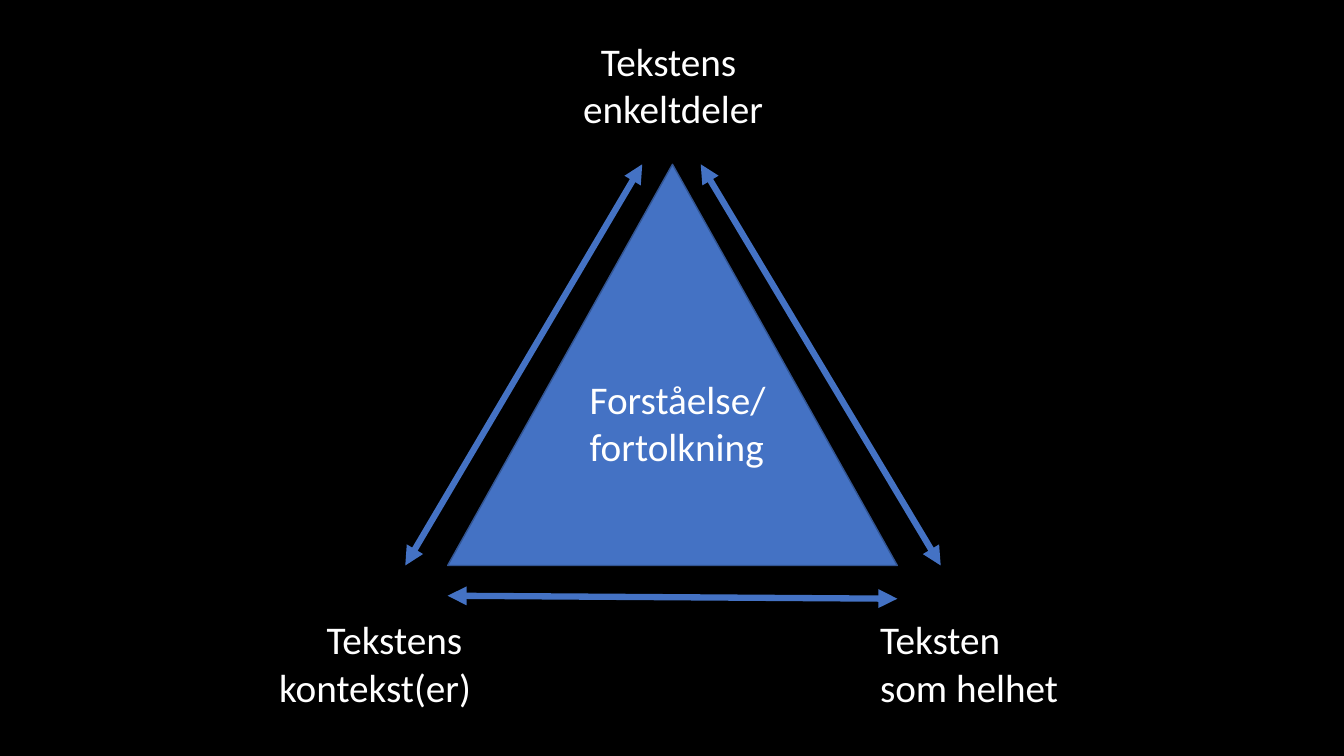
from dataclasses import dataclass

from lxml import etree
from pptx import Presentation
from pptx import util as u
from pptx.dml.color import RGBColor
from pptx.enum import shapes, text
from pptx.oxml import ns
from pptx.slide import Slide

PX = u.Inches(1) // 100
COLORS = {"background": "000000", "blue": "4472C4", "outline": "325491", "text": "FFFFFF"}
ALIGN = text.PP_ALIGN


@dataclass(frozen=True)
class Label:
    lines: tuple[str, ...]
    left: int
    top: int
    width: int
    align: text.PP_ALIGN = ALIGN.LEFT


@dataclass(frozen=True)
class Arrow:
    x1: int
    y1: int
    x2: int
    y2: int


APEX_Y, BASE_Y = 163, 561
BASE_LEFT, BASE_WIDTH = 444, 446
LABEL_HEIGHT = 104
CORNER_TOP = 606

LABELS = (
    Label(("Tekstens ", "enkeltdeler"), 560, 32, 215, ALIGN.CENTER),
    Label(("Teksten", "som helhet"), 863, CORNER_TOP, 312),
    Label(("Tekstens ", "kontekst(er)"), 260, CORNER_TOP, 217, ALIGN.RIGHT),
    Label(("Forståelse/", "fortolkning"), 575, 367, 436),
)
ARROWS = (
    Arrow(637, APEX_Y, 402, BASE_Y),
    Arrow(695, APEX_Y, 933, BASE_Y),
    Arrow(BASE_LEFT, 591, BASE_LEFT + BASE_WIDTH, 594),
)


def px(*lengths: int) -> list[u.Emu]:
    return [u.Emu(length * PX) for length in lengths]


def rgb(name: str) -> RGBColor:
    return RGBColor.from_string(COLORS[name])


def add_run(p, content: str, *, size: int = 28, font: str = "Calibri", color: str = "text") -> None:
    r = p.add_run()
    r.text = content
    r.font.size = u.Pt(size)
    r.font.name = font
    r.font.color.rgb = rgb(color)


def draw_label(s: Slide, label: Label) -> None:
    box = s.shapes.add_textbox(*px(label.left, label.top, label.width, LABEL_HEIGHT))
    tf = box.text_frame
    tf.word_wrap = True
    tf.auto_size = text.MSO_AUTO_SIZE.SHAPE_TO_FIT_TEXT
    for i, line in enumerate(label.lines):
        p = tf.add_paragraph() if i else tf.paragraphs[0]
        p.alignment = label.align
        add_run(p, line)


def draw_triangle(s: Slide) -> None:
    sp = s.shapes.add_shape(
        shapes.MSO_SHAPE.ISOSCELES_TRIANGLE,
        *px(BASE_LEFT, APEX_Y, BASE_WIDTH, BASE_Y - APEX_Y),
    )
    sp.shadow.inherit = False
    sp.fill.solid()
    sp.fill.fore_color.rgb = rgb("blue")
    sp.line.color.rgb = rgb("outline")
    sp.line.width = u.Pt(1)


def draw_arrow(s: Slide, arrow: Arrow) -> None:
    sp = s.shapes.add_connector(
        shapes.MSO_CONNECTOR.STRAIGHT, *px(arrow.x1, arrow.y1, arrow.x2, arrow.y2)
    )
    sp.line.color.rgb = rgb("blue")
    sp.line.width = u.Pt(4.5)
    ln = sp.line._get_or_add_ln()
    for end in ("a:headEnd", "a:tailEnd"):
        etree.SubElement(ln, ns.qn(end), type="triangle")
    etree.SubElement(sp._element.spPr, ns.qn("a:effectLst"))


def main() -> None:
    prs = Presentation()
    prs.slide_width, prs.slide_height = u.Inches(13.33), u.Inches(7.5)
    s = prs.slides.add_slide(prs.slide_layouts[6])
    s.background.fill.solid()
    s.background.fill.fore_color.rgb = rgb("background")
    draw_triangle(s)
    for arrow in ARROWS:
        draw_arrow(s, arrow)
    for label in LABELS:
        draw_label(s, label)
    prs.save("out.pptx")


if __name__ == "__main__":
    main()
